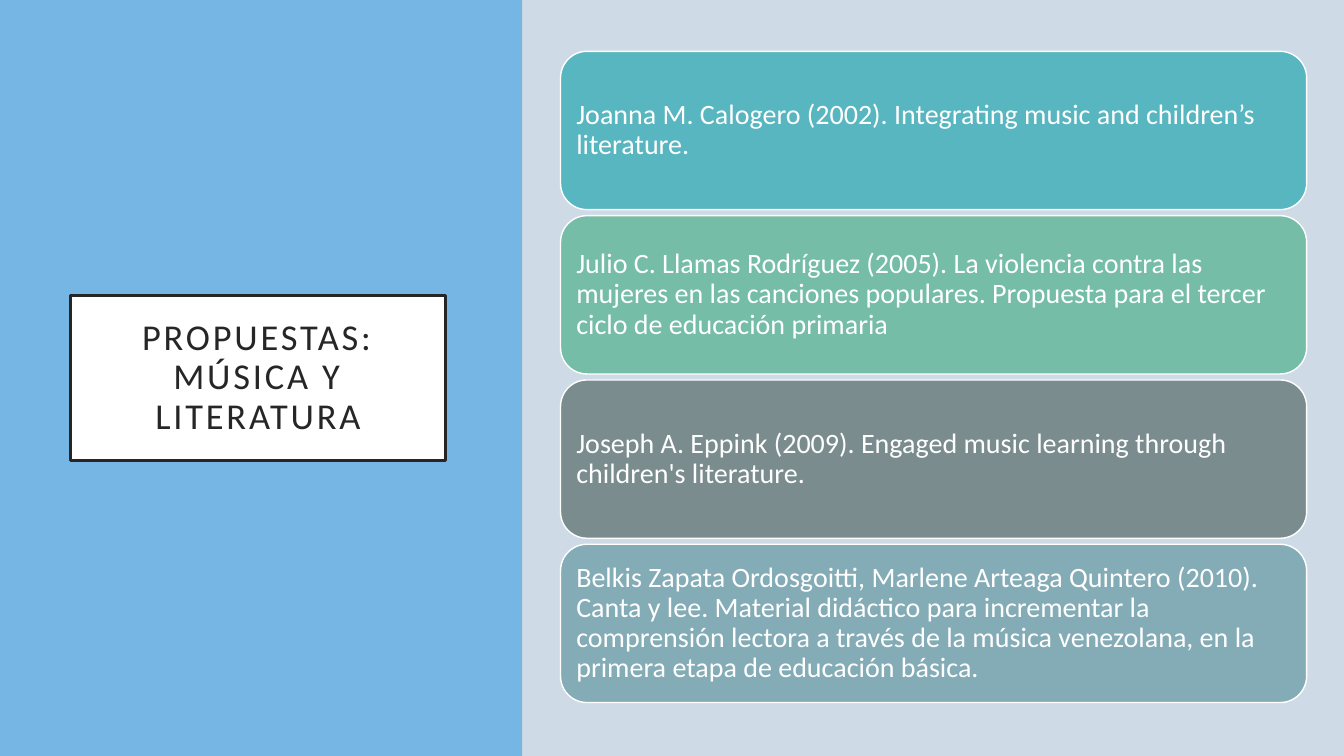
from dataclasses import dataclass

from pptx import Presentation
from pptx import util as u
from pptx.dml.color import RGBColor
from pptx.enum import shapes, text


@dataclass(frozen=True)
class Theme:
    font: str = "Calibri"
    back: str = "CEDBE6"
    side: str = "75B6E5"
    ink: str = "262626"
    white: str = "FFFFFF"
    cards: tuple = ("58B6C0", "75BDA7", "7A8C8E", "84ACB6")
    head: int = 26
    body: int = 20


THEME = Theme()
TITLE = "PROPUESTAS: MÚSICA Y LITERATURA"
WORKS = (
    "Joanna M. Calogero (2002). Integrating music and children’s literature.",
    "Julio C. Llamas Rodríguez (2005). La violencia contra las mujeres en las "
    "canciones populares. Propuesta para el tercer ciclo de educación primaria",
    "Joseph A. Eppink (2009). Engaged music learning through children's literature.",
    "Belkis Zapata Ordosgoitti, Marlene Arteaga Quintero (2010). Canta y lee. "
    "Material didáctico para incrementar la comprensión lectora a través de la "
    "música venezolana, en la primera etapa de educación básica.",
)


def add_box(slide, box, fill, kind=shapes.MSO_SHAPE.RECTANGLE, line=None, width=1):
    shape = slide.shapes.add_shape(kind, *map(u.Inches, box))
    shape.shadow.inherit = False
    shape.fill.solid()
    shape.fill.fore_color.rgb = RGBColor.from_string(fill)
    if line:
        shape.line.color.rgb = RGBColor.from_string(line)
        shape.line.width = u.Pt(width)
    else:
        shape.line.fill.background()
    return shape


def write(shape, words, *, size, color, align, inset, track=0):
    frame = shape.text_frame
    frame.word_wrap = True
    frame.vertical_anchor = text.MSO_ANCHOR.MIDDLE
    frame.margin_left = frame.margin_right = u.Inches(inset)
    frame.margin_top = frame.margin_bottom = u.Inches(inset)
    para = frame.paragraphs[0]
    para.alignment = align
    para.line_spacing = 0.9
    run = para.add_run()
    run.text = words
    run.font.name = THEME.font
    run.font.size = u.Pt(size)
    run.font.color.rgb = RGBColor.from_string(color)
    if track:
        run._r.get_or_add_rPr().set("spc", str(track * 100))


def add_side(slide, box):
    left, top, width, height = box
    add_box(slide, box, THEME.side)
    label = add_box(slide, (left + 0.7, top + 2.93, 3.72, 1.64), THEME.white,
                    line=THEME.ink, width=2.5)
    write(label, TITLE, size=THEME.head, color=THEME.ink,
          align=text.PP_ALIGN.CENTER, inset=0.2, track=2)


def add_list(slide, box):
    left, top, width, height = box
    add_box(slide, box, THEME.back)
    tall, step = 1.57, 1.63
    for row, (words, fill) in enumerate(zip(WORKS, THEME.cards)):
        place = (left + 0.36, top + 0.51 + row * step, width - 0.74, tall)
        card = add_box(slide, place, fill, shapes.MSO_SHAPE.ROUNDED_RECTANGLE,
                       line=THEME.white)
        write(card, words, size=THEME.body, color=THEME.white,
              align=text.PP_ALIGN.LEFT, inset=0.08)


def main():
    deck = Presentation()
    deck.slide_width, deck.slide_height = u.Inches(13.33), u.Inches(7.5)
    slide = deck.slides.add_slide(deck.slide_layouts[6])
    slide.background.fill.solid()
    slide.background.fill.fore_color.rgb = RGBColor.from_string(THEME.back)
    add_side(slide, (0, 0, 5.18, 7.5))
    add_list(slide, (5.2, 0, 8.14, 7.5))
    deck.save("out.pptx")


if __name__ == "__main__":
    main()
